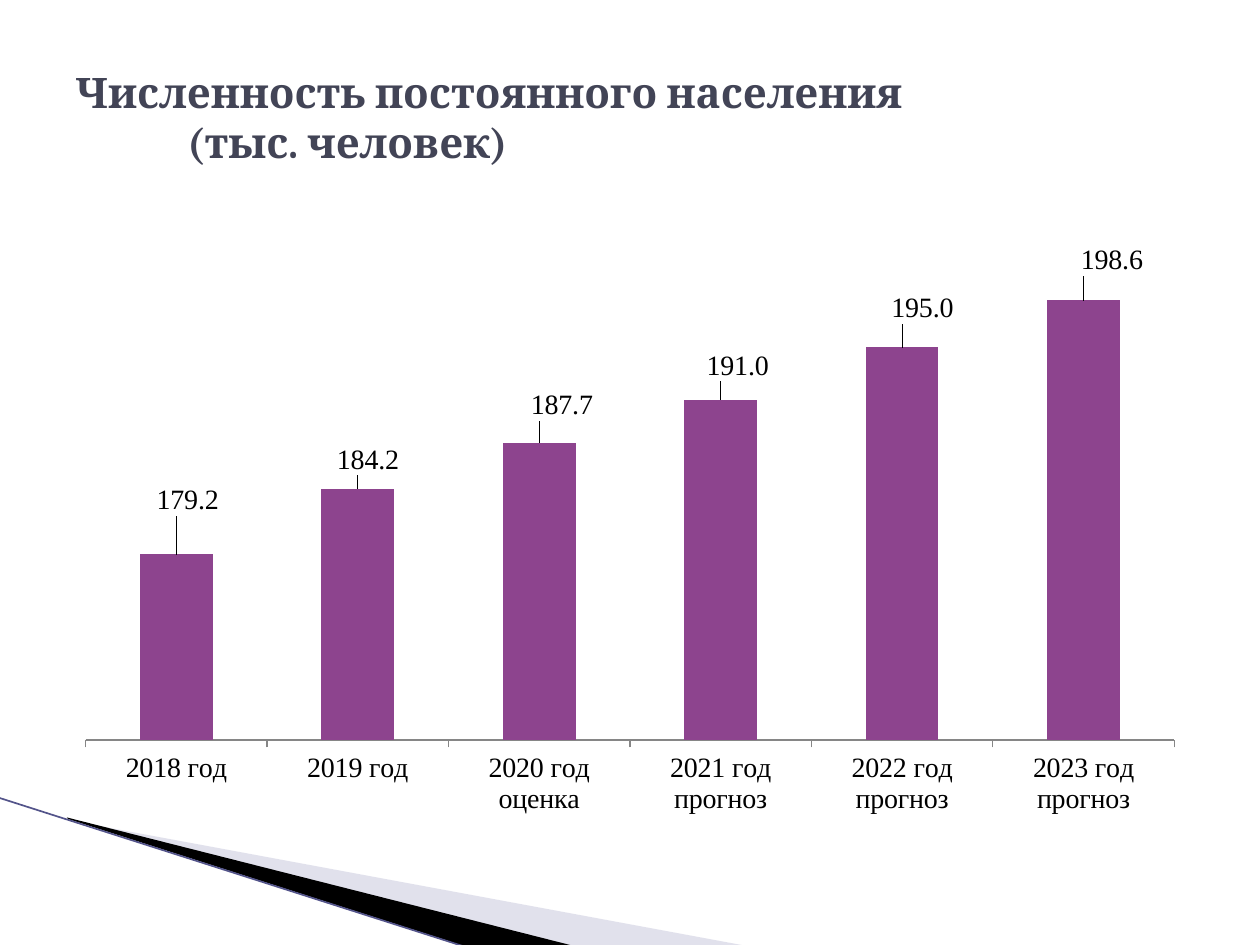
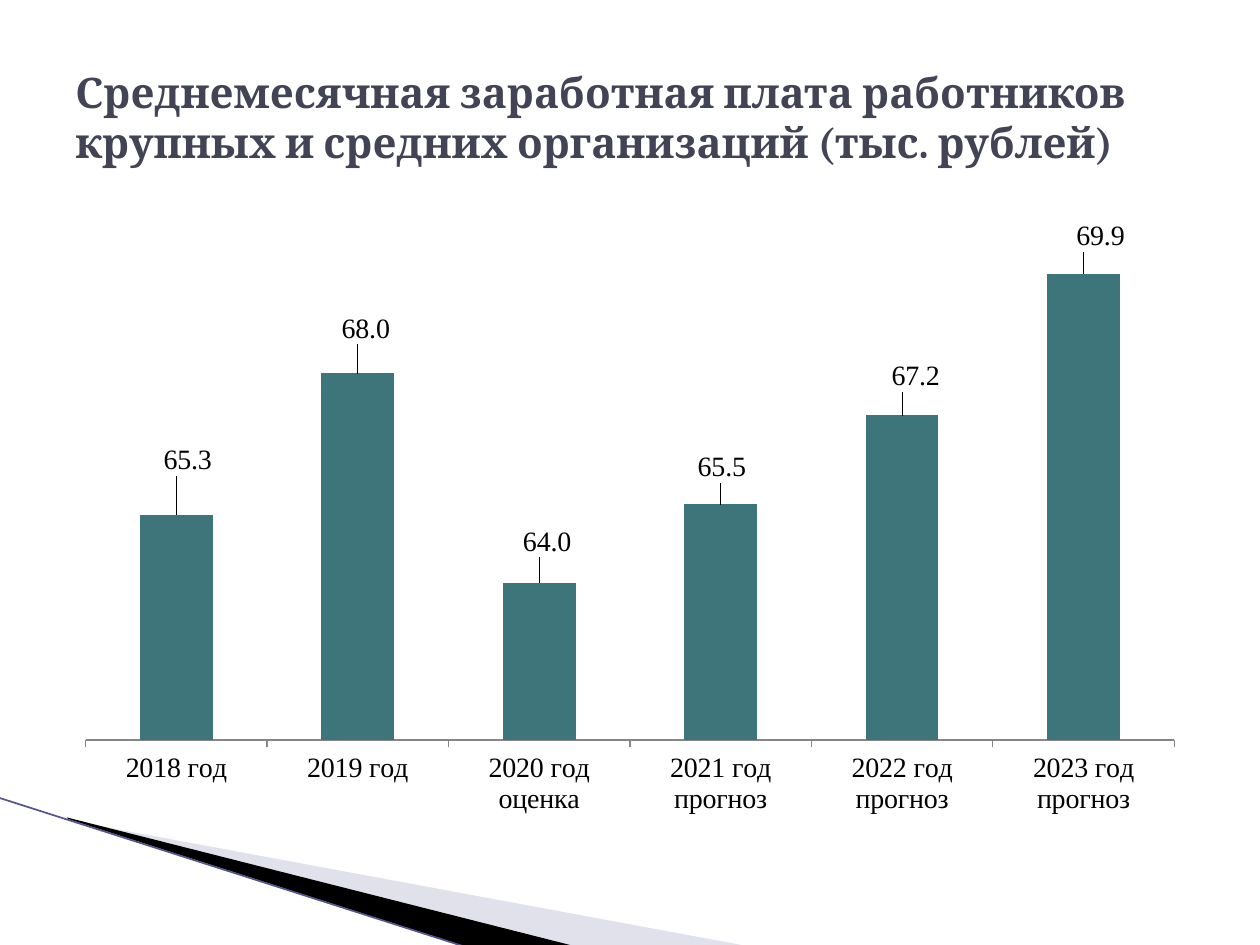
from lxml import etree
from pptx import Presentation, util as u
from pptx.chart.data import CategoryChartData
from pptx.dml.color import RGBColor
from pptx.enum import chart as ch, shapes, text
from pptx.oxml import parse_xml
from pptx.oxml.ns import nsdecls, qn

Cm, Pt = u.Cm, u.Pt
INK = RGBColor(0x42, 0x44, 0x56)
BLACK = RGBColor(0, 0, 0)
LILAC = RGBColor(0xB6, 0xB6, 0xD1)
EDGE = RGBColor(0x53, 0x54, 0x8A)
GREY = RGBColor(0x86, 0x86, 0x86)
PLUM = RGBColor(0x8D, 0x44, 0x8E)
TEAL = RGBColor(0x3E, 0x75, 0x7B)

HEAD = {"name": "Cambria", "size": Pt(24), "bold": True}
LABEL = {"name": "Times New Roman", "size": Pt(16)}
FORM = "#\\ ##0.0"
YEARS = ["2018 год", "2019 год", "2020 год оценка",
         "2021 год прогноз", "2022 год прогноз", "2023 год прогноз"]
WEDGES = [
    (LILAC, 40, [(1.4, 16.54), (15.11, 19.08), (11.58, 19.08), (1.4, 16.51)]),
    (BLACK, 100, [(1.35, 16.48), (11.61, 19.08), (9.45, 19.1), (1.37, 16.51)]),
]
PLOT = {"x": 0.02, "y": 0.02, "w": 0.96, "h": 0.84}
SLIDES = [
    {"title": [("Численность постоянного населения", 0), ("(тыс. человек)", 2.26)],
     "color": PLUM, "low": 165, "high": 205,
     "vals": [179.2, 184.2, 187.7, 191, 195, 198.6],
     "shift": [(7, -53), (6, -13), (17, -27), (12, -21), (15, -29), (22, -30)]},
    {"title": [("Среднемесячная заработная плата работников крупных "
                "и средних организаций (тыс. рублей)", 0)],
     "color": TEAL, "low": 61, "high": 71,
     "vals": [65.3, 68, 64, 65.5, 67.2, 69.9],
     "shift": [(7, -54), (4, -38), (4, -32), (-2, -26), (9, -29), (12, -27)]},
]


def style(font, form, color):
    for key, val in form.items():
        setattr(font, key, val)
    font.color.rgb = color


def layout(modes, spots):
    rows = [f'<c:{k}Mode val="edge"/>' for k in modes]
    rows += [f'<c:{k} val="{v}"/>' for k, v in spots.items()]
    target = '<c:layoutTarget val="inner"/>' if modes else ""
    return (f'<c:layout {nsdecls("c")}><c:manualLayout>{target}'
            f'{"".join(rows)}</c:manualLayout></c:layout>')


deck = Presentation()
deck.slide_width, deck.slide_height = Cm(25.4), Cm(19.05)

for page in SLIDES:
    slide = deck.slides.add_slide(deck.slide_layouts[6])

    for color, alpha, spots in WEDGES:
        path = [(round(x * 100), round(y * 100)) for x, y in spots]
        pen = slide.shapes.build_freeform(*path[0], scale=Cm(1) / 100)
        pen.add_line_segments(path[1:], close=True)
        wedge = pen.convert_to_shape()
        wedge.shadow.inherit = False
        wedge.fill.solid()
        wedge.fill.fore_color.rgb = color
        wedge.line.fill.background()
        tone = wedge.fill._xPr.find(".//" + qn("a:srgbClr"))
        etree.SubElement(tone, qn("a:alpha")).set("val", str(alpha * 1000))

    edge = slide.shapes.add_connector(
        shapes.MSO_CONNECTOR.STRAIGHT, Cm(-0.03), Cm(16.08), Cm(9.42), Cm(19.1))
    edge.line.color.rgb = EDGE
    edge.line.width = Pt(0.95)
    etree.SubElement(edge._element.spPr, qn("a:effectLst"))

    data = CategoryChartData(number_format=FORM)
    data.categories = YEARS
    data.add_series("Series 1", page["vals"])
    chart = slide.shapes.add_chart(
        ch.XL_CHART_TYPE.COLUMN_CLUSTERED,
        Cm(1.27), Cm(4.11), Cm(22.86), Cm(12.57), data).chart
    chart.has_legend = chart.has_title = False
    style(chart.font, LABEL, BLACK)
    area = chart._chartSpace.chart.plotArea
    for old in area.findall(qn("c:layout")):
        area.remove(old)
    area.insert(0, parse_xml(layout("xy", PLOT)))

    axis = chart.value_axis
    axis.visible = axis.has_major_gridlines = False
    axis.minimum_scale, axis.maximum_scale = page["low"], page["high"]
    axis = chart.category_axis
    axis.major_tick_mark = ch.XL_TICK_MARK.OUTSIDE
    axis.format.line.color.rgb = GREY
    style(axis.tick_labels.font, LABEL, BLACK)

    plot = chart.plots[0]
    plot.gap_width = 150
    plot.vary_by_categories = False
    bars = plot.series[0]
    bars.format.fill.solid()
    bars.format.fill.fore_color.rgb = page["color"]
    tags = bars.data_labels
    tags.show_value = True
    tags.number_format = FORM
    tags.number_format_is_linked = False
    tags.position = ch.XL_LABEL_POSITION.OUTSIDE_END
    style(tags.font, LABEL, BLACK)
    flags = "".join(f'<c:show{k} val="{int(k == "Val")}"/>' for k in
                    ("LegendKey", "Val", "CatName", "SerName", "Percent", "BubbleSize"))
    for n, (x, y) in enumerate(page["shift"]):
        place = layout("", {"x": x / 1000, "y": y / 1000})
        tags._element.insert(n, parse_xml(
            f'<c:dLbl {nsdecls("c")}><c:idx val="{n}"/>{place}'
            f'<c:dLblPos val="outEnd"/>{flags}</c:dLbl>'))

    box = slide.shapes.add_textbox(Cm(1.27), Cm(0.76), Cm(22.86), Cm(3.18))
    frame = box.text_frame
    frame.word_wrap = True
    frame.vertical_anchor = text.MSO_ANCHOR.MIDDLE
    for n, (words, left) in enumerate(page["title"]):
        para = frame.add_paragraph() if n else frame.paragraphs[0]
        para._p.get_or_add_pPr().set("marL", str(Cm(left)))
        run = para.add_run()
        run.text = words
        style(run.font, HEAD, INK)

deck.save("out.pptx")
